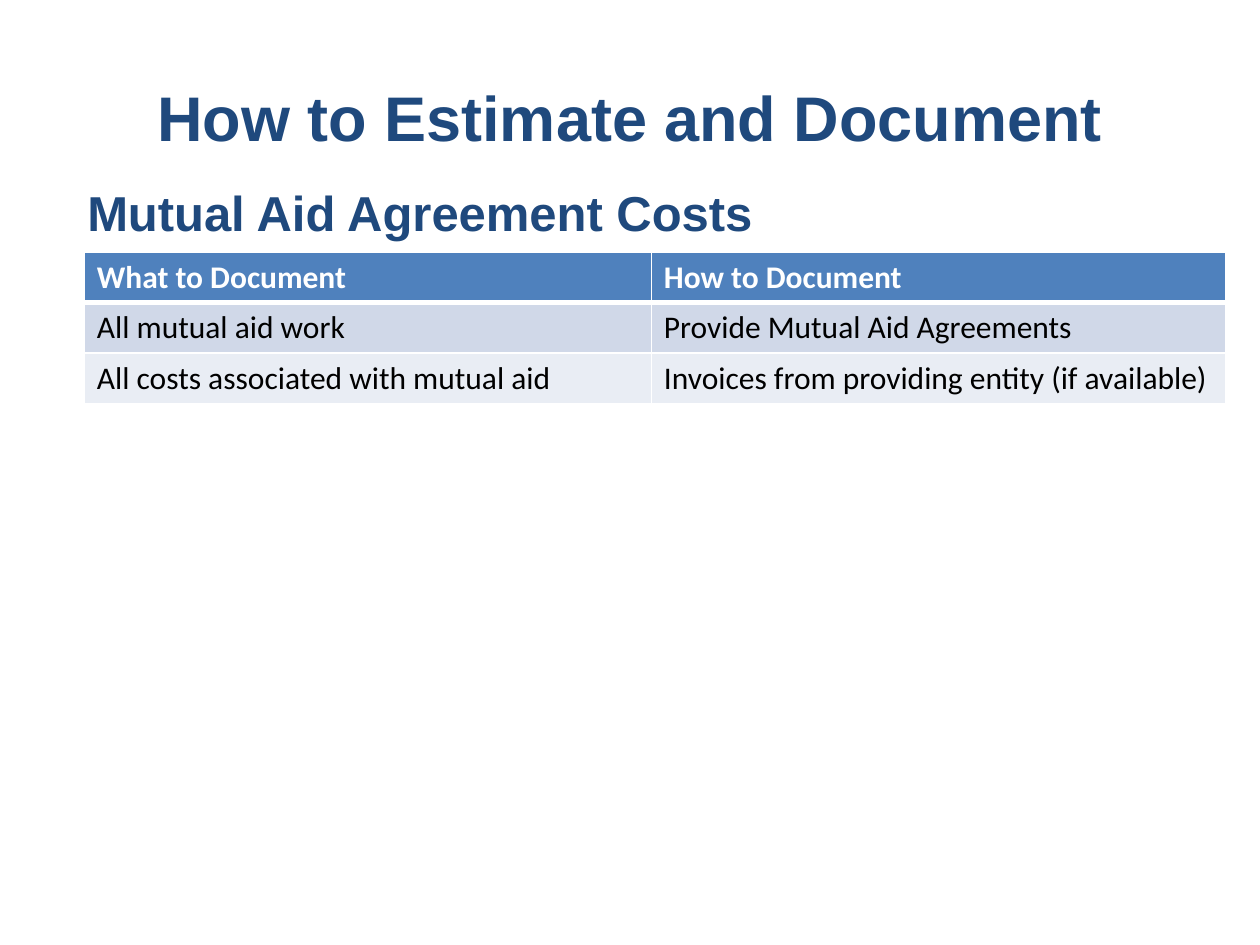
from dataclasses import dataclass

from lxml.etree import SubElement
from pptx import Presentation
from pptx.dml.color import RGBColor as RGB
from pptx.enum.text import MSO_ANCHOR as Anchor, PP_ALIGN as Align
from pptx.oxml.ns import qn
from pptx.util import Cm, Pt


@dataclass(frozen=True)
class Theme:
    navy: str = "1F497D"
    header: str = "4F81BD"
    bands: tuple = ("D0D8E8", "E9EDF4")
    white: str = "FFFFFF"
    black: str = "000000"
    heading_font: str = "Arial"
    table_font: str = "Calibri"
    title_size: int = 36
    subtitle_size: int = 28
    table_size: int = 18
    rule: int = 1
    header_rule: int = 3


def write(frame, text, *, font, size, color, bold=False, align=Align.LEFT):
    paragraph = frame.paragraphs[0]
    paragraph.alignment = align
    run = paragraph.add_run()
    run.text = text
    run.font.name = font
    run.font.size = Pt(size)
    run.font.bold = bold
    run.font.color.rgb = RGB.from_string(color)


class SlideBuilder:
    def __init__(self, slide, theme):
        self.slide = slide
        self.theme = theme

    def heading(self, text, box, size, *, anchor=Anchor.TOP, align=Align.LEFT,
                left_inset=0.25, top_inset=0.13):
        frame = self.slide.shapes.add_textbox(*map(Cm, box)).text_frame
        frame.word_wrap = True
        frame.vertical_anchor = anchor
        frame.margin_left = Cm(left_inset)
        frame.margin_top = Cm(top_inset)
        write(frame, text, font=self.theme.heading_font, size=size,
              color=self.theme.navy, bold=True, align=align)

    def borders(self, cell, **widths):
        # Fill must follow the border lines, so call this before filling
        properties = cell._tc.get_or_add_tcPr()
        for side in "LRTB":
            width = widths.get(side, self.theme.rule)
            line = SubElement(properties, qn(f"a:ln{side}"), w=str(Pt(width)))
            fill = SubElement(line, qn("a:solidFill"))
            SubElement(fill, qn("a:srgbClr"), val=self.theme.white)

    def table(self, rows, left, top, column_widths, row_height):
        theme = self.theme
        table = self.slide.shapes.add_table(
            len(rows), len(column_widths), Cm(left), Cm(top),
            Cm(sum(column_widths)), Cm(row_height * len(rows))).table
        for column, width in zip(table.columns, column_widths):
            column.width = Cm(width)
        for r, texts in enumerate(rows):
            is_header = r == 0
            fill = theme.header if is_header else theme.bands[(r - 1) % 2]
            edges = {0: {"B": theme.header_rule}, 1: {"T": theme.header_rule}}
            for c, text in enumerate(texts):
                cell = table.cell(r, c)
                self.borders(cell, **edges.get(r, {}))
                cell.fill.solid()
                cell.fill.fore_color.rgb = RGB.from_string(fill)
                write(cell.text_frame, text, font=theme.table_font,
                      size=theme.table_size, bold=is_header,
                      color=theme.white if is_header else theme.black)


def main():
    theme = Theme()
    deck = Presentation()
    deck.slide_width, deck.slide_height = Cm(25.4), Cm(19.05)
    builder = SlideBuilder(deck.slides.add_slide(deck.slide_layouts[6]), theme)

    # Title and subtitle
    builder.heading("How to Estimate and Document", (1.27, 0.76, 22.86, 3.18),
                    theme.title_size, anchor=Anchor.MIDDLE, align=Align.CENTER)
    builder.heading("Mutual Aid Agreement Costs", (1.35, 3.38, 23.29, 12.57),
                    theme.subtitle_size, left_inset=0.41, top_inset=0.3)

    # Documentation requirements
    requirements = [
        ("What to Document", "How to Document"),
        ("All mutual aid work", "Provide Mutual Aid Agreements"),
        ("All costs associated with mutual aid",
         "Invoices from providing entity (if available)"),
    ]
    builder.table(requirements, left=1.7, top=5.08,
                  column_widths=(11.43, 11.58), row_height=1.02)

    deck.save("out.pptx")


if __name__ == "__main__":
    main()
